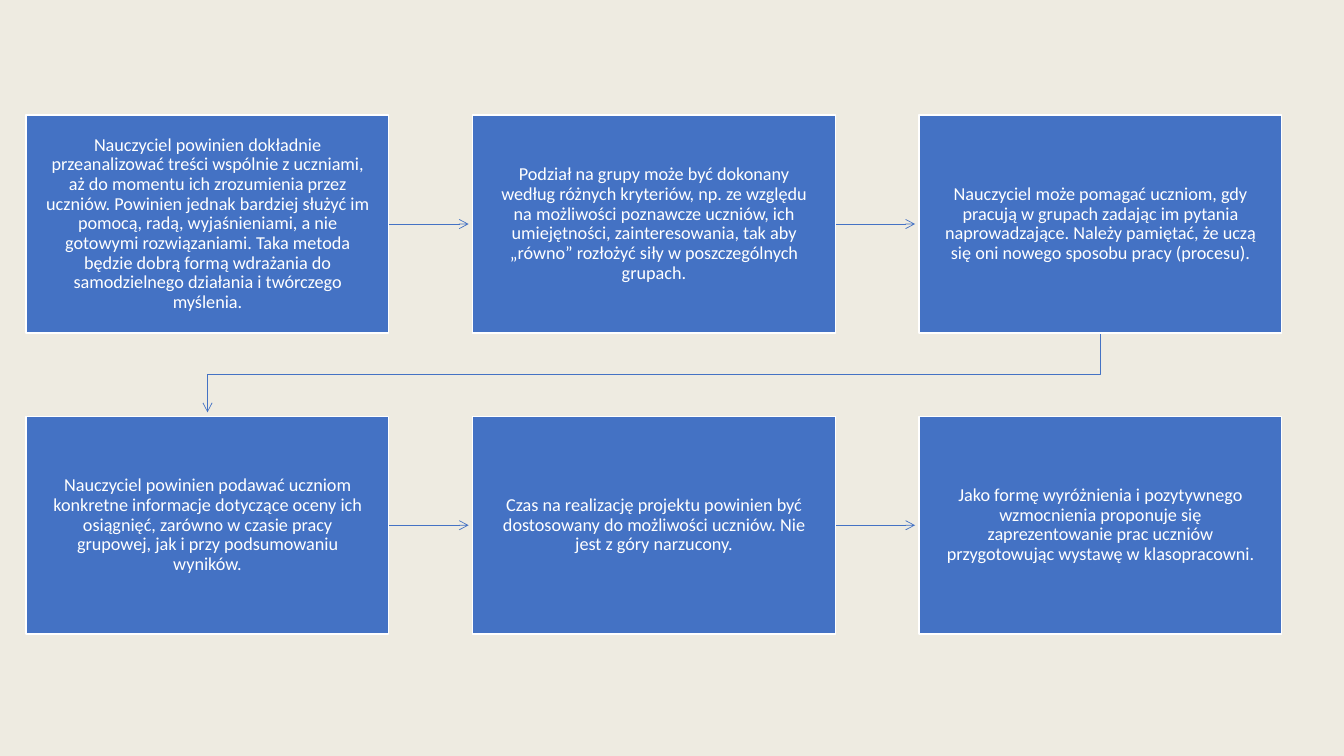
from lxml.etree import SubElement
from pptx import Presentation
from pptx.dml.color import RGBColor
from pptx.enum.shapes import MSO_CONNECTOR, MSO_SHAPE
from pptx.enum.text import MSO_ANCHOR, PP_ALIGN
from pptx.oxml.ns import qn
from pptx.util import Cm, Pt

CREAM = RGBColor(0xEE, 0xEB, 0xE1)
BLUE = RGBColor(0x44, 0x72, 0xC4)
WHITE = RGBColor(0xFF, 0xFF, 0xFF)

COLUMNS = 3
BOX_WIDTH, BOX_HEIGHT = Cm(9.14), Cm(5.49)
STEP_X, STEP_Y = Cm(11.25), Cm(7.59)
ARROW_GAP = Cm(0.1)

STEPS = [
    "Nauczyciel powinien dokładnie przeanalizować treści wspólnie z uczniami, "
    "aż do momentu ich zrozumienia przez uczniów. Powinien jednak bardziej "
    "służyć im pomocą, radą, wyjaśnieniami, a nie gotowymi rozwiązaniami. "
    "Taka metoda będzie dobrą formą wdrażania do samodzielnego działania "
    "i twórczego myślenia.",
    "Podział na grupy może być dokonany według różnych kryteriów, np. ze "
    "względu na możliwości poznawcze uczniów, ich umiejętności, "
    "zainteresowania, tak aby „równo” rozłożyć siły w poszczególnych grupach.",
    "Nauczyciel może pomagać uczniom, gdy pracują w grupach zadając im "
    "pytania naprowadzające. Należy pamiętać, że uczą się oni nowego sposobu "
    "pracy (procesu).",
    "Nauczyciel powinien podawać uczniom konkretne informacje dotyczące oceny "
    "ich osiągnięć, zarówno w czasie pracy grupowej, jak i przy podsumowaniu "
    "wyników.",
    "Czas na realizację projektu powinien być dostosowany do możliwości "
    "uczniów. Nie jest z góry narzucony.",
    "Jako formę wyróżnienia i pozytywnego wzmocnienia proponuje się "
    "zaprezentowanie prac uczniów przygotowując wystawę w klasopracowni.",
]


def style_arrow(arrow):
    arrow.line.color.rgb = BLUE
    arrow.line.width = Pt(0.5)
    SubElement(arrow.line._get_or_add_ln(), qn("a:tailEnd"), type="arrow")
    SubElement(arrow._element.spPr, qn("a:effectLst"))


def add_straight_arrow(slide, left, top):
    """Join the box at left, top to the next one in its row."""
    middle = top + BOX_HEIGHT // 2
    arrow = slide.shapes.add_connector(
        MSO_CONNECTOR.STRAIGHT, left + BOX_WIDTH, middle,
        left + STEP_X - ARROW_GAP, middle)
    style_arrow(arrow)


def add_return_arrow(slide, left, top):
    """Join the last box of a row, at left, top, to the first of the next."""
    start_x = left + BOX_WIDTH // 2
    end_x = start_x - (COLUMNS - 1) * STEP_X
    bend_y = top + (BOX_HEIGHT + STEP_Y) // 2
    builder = slide.shapes.build_freeform(start_x, top + BOX_HEIGHT)
    builder.add_line_segments(
        [(start_x, bend_y), (end_x, bend_y),
         (end_x, top + STEP_Y - ARROW_GAP)], close=False)
    arrow = builder.convert_to_shape()
    arrow.fill.background()
    style_arrow(arrow)


def add_step_box(slide, left, top, text):
    box = slide.shapes.add_shape(
        MSO_SHAPE.RECTANGLE, left, top, BOX_WIDTH, BOX_HEIGHT)
    box.shadow.inherit = False
    box.fill.solid()
    box.fill.fore_color.rgb = BLUE
    box.line.color.rgb = WHITE
    box.line.width = Pt(1)

    frame = box.text_frame
    frame.text = text
    frame.word_wrap = True
    frame.vertical_anchor = MSO_ANCHOR.MIDDLE
    frame.margin_left = frame.margin_right = Cm(0.45)
    frame.margin_top = frame.margin_bottom = Cm(0.48)
    paragraph = frame.paragraphs[0]
    paragraph.alignment = PP_ALIGN.CENTER
    paragraph.line_spacing = 0.9
    font = paragraph.runs[0].font
    font.name = "Calibri"
    font.size = Pt(13)
    font.color.rgb = WHITE


def add_process(slide, left, top):
    """Lay the steps out row by row, joined by arrows."""
    for index, text in enumerate(STEPS):
        row, column = divmod(index, COLUMNS)
        box_left, box_top = left + column * STEP_X, top + row * STEP_Y
        if column < COLUMNS - 1:
            add_straight_arrow(slide, box_left, box_top)
        elif index < len(STEPS) - 1:
            add_return_arrow(slide, box_left, box_top)
        add_step_box(slide, box_left, box_top, text)


def main():
    presentation = Presentation()
    presentation.slide_width = Cm(33.87)
    presentation.slide_height = Cm(19.05)
    slide = presentation.slides.add_slide(presentation.slide_layouts[6])
    slide.background.fill.solid()
    slide.background.fill.fore_color.rgb = CREAM
    add_process(slide, Cm(0.66), Cm(2.9))
    presentation.save("out.pptx")


if __name__ == "__main__":
    main()
